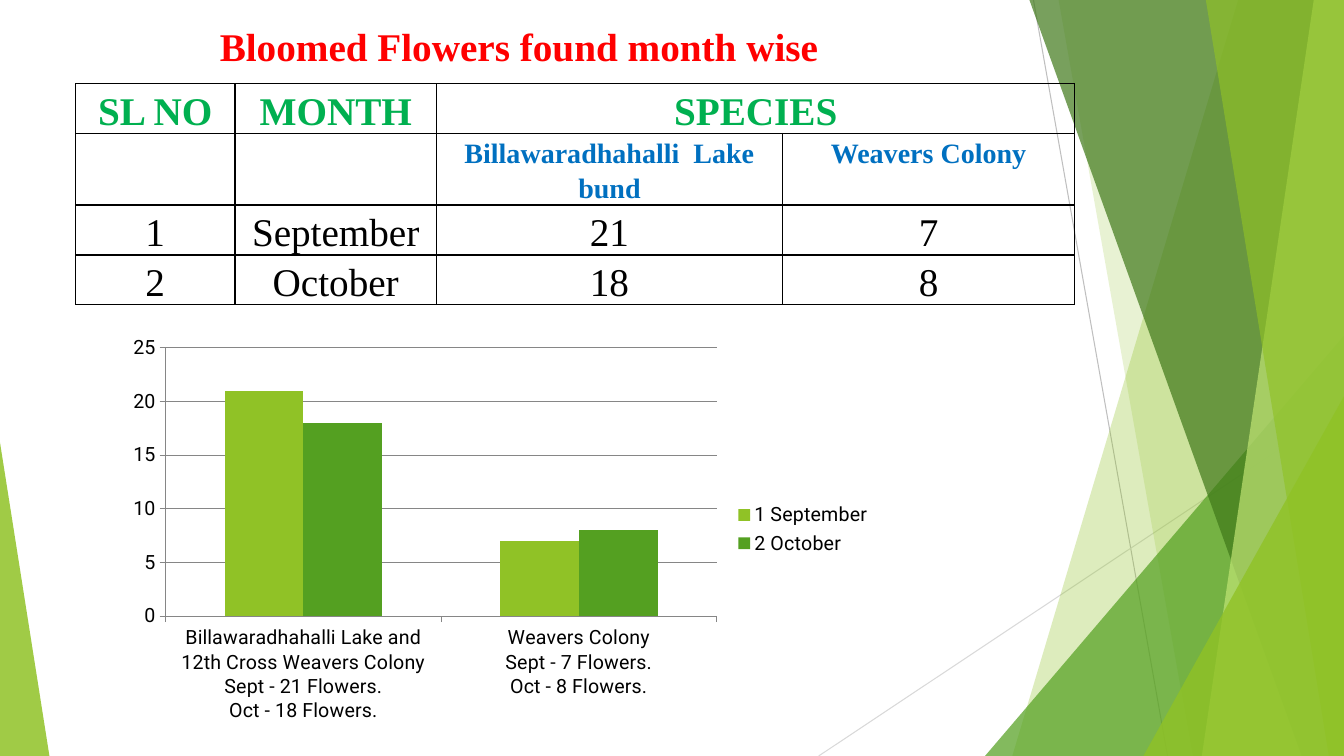
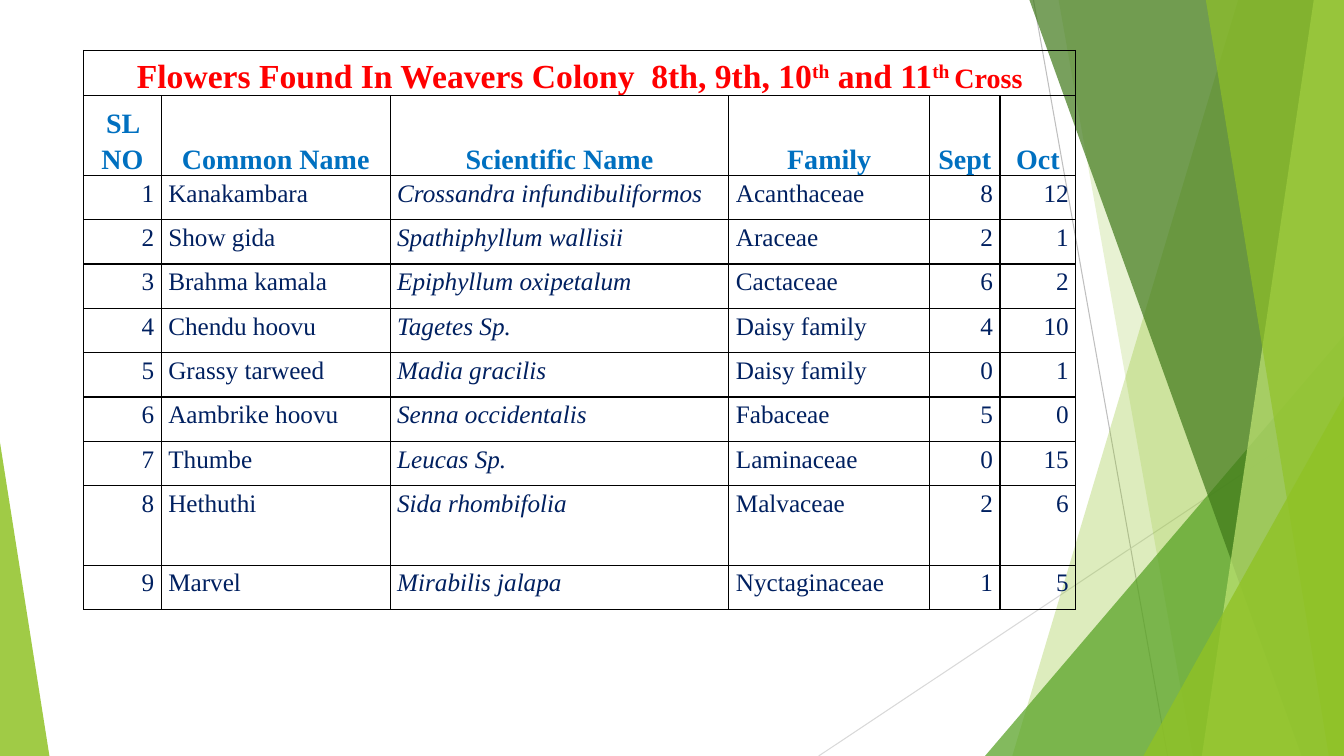
"""Build two slides about the flowers found in bloom, month by month."""
from lxml import etree
from pptx import Presentation
from pptx.chart.data import CategoryChartData
from pptx.dml.color import RGBColor
from pptx.enum import chart as ch, shapes, text
from pptx.oxml import ns
from pptx.util import Inches, Pt

WIDTH, HEIGHT = 13.33, 7.5
SERIF, SANS = "Times New Roman", "Roboto"
RED, BLUE, NAVY, BLACK = "FF0000", "0070C0", "002060", "000000"
EMERALD, LIME, GREEN, FOREST, PALE = "00B050", "90C226", "54A021", "3F7819", "C0E474"
GREY = "868686"
LEFT, CENTER, RIGHT = text.PP_ALIGN.LEFT, text.PP_ALIGN.CENTER, text.PP_ALIGN.RIGHT
TOP, BOTTOM = text.MSO_ANCHOR.TOP, text.MSO_ANCHOR.BOTTOM
rgb = RGBColor.from_string


def add_grid(s, left, top, widths, heights):
    """Add a table with black cell borders and no fill."""
    frame = s.shapes.add_table(len(heights), len(widths), Inches(left), Inches(top),
                               Inches(sum(widths)), Inches(sum(heights)))
    table = frame.table
    table.first_row = table.horz_banding = False
    for column, width in zip(table.columns, widths):
        column.width = Inches(width)
    for row, height in zip(table.rows, heights):
        row.height = Inches(height)
    for cell in table.iter_cells():
        tc_pr = cell._tc.get_or_add_tcPr()
        for side in ("lnL", "lnR", "lnT", "lnB"):
            ln = etree.SubElement(tc_pr, ns.qn(f"a:{side}"), w=str(Pt(1)))
            solid = etree.SubElement(ln, ns.qn("a:solidFill"))
            etree.SubElement(solid, ns.qn("a:srgbClr"), val=BLACK)
        cell.fill.background()
        cell.margin_left = cell.margin_right = Inches(0.07)
        cell.margin_top = cell.margin_bottom = 0
    return table


def write_cell(cell, words, size, color, bold=False, align=CENTER, anchor=TOP):
    """Write one paragraph into a table cell and return it."""
    cell.vertical_anchor = anchor
    p = cell.text_frame.paragraphs[0]
    p.text = words
    p.alignment, p.line_spacing = align, 1.15
    p.font.name, p.font.size, p.font.bold = SERIF, Pt(size), bold
    p.font.color.rgb = rgb(color)
    return p


prs = Presentation()
prs.slide_width, prs.slide_height = Inches(WIDTH), Inches(HEIGHT)
s = prs.slides.add_slide(prs.slide_layouts[5])
title = s.shapes.title

decoration = []
for x1, y1, x2, y2, color in [(10.25, 0, 11.58, HEIGHT, "BFBFBF"),
                              (WIDTH, 4.03, 8.12, HEIGHT, "D9D9D9")]:
    line = s.shapes.add_connector(shapes.MSO_CONNECTOR.STRAIGHT, Inches(x1), Inches(y1),
                                  Inches(x2), Inches(y2))
    line.line.color.rgb = rgb(color)
    line.line.width = Pt(0.75)
    etree.SubElement(line.element.spPr, ns.qn("a:effectLst"))
    decoration.append(line)

# Bands hold (top x, bottom x); triangles hold (left, top, width, apex).
facets = [
    ((12.28, 10.04), LIME, 30),
    ((10.5, 11.83), LIME, 20),
    ((9.77, 3.33, 3.56, 1), GREEN, 72),
    ((10.21, 12.91), FOREST, 70),
    ((13.03, 11.92), PALE, 70),
    ((11.96, 13.18), LIME, 65),
    ((11.34, 3.93, 1.99, 1), LIME, 80),
    ((0, 4.39, 0.49, 0), LIME, 85),
]
for geometry, color, opacity in facets:
    if len(geometry) == 2:
        top_x, bottom_x = geometry
        outline = s.shapes.build_freeform(Inches(top_x), 0)
        outline.add_line_segments([(Inches(x), Inches(y)) for x, y in
                                   [(WIDTH, 0), (WIDTH, HEIGHT), (bottom_x, HEIGHT)]])
        sp = outline.convert_to_shape()
    else:
        left, top, width, apex = geometry
        sp = s.shapes.add_shape(shapes.MSO_SHAPE.ISOSCELES_TRIANGLE, Inches(left),
                                Inches(top), Inches(width), Inches(HEIGHT - top))
        sp.adjustments[0] = apex
    sp.shadow.inherit = False
    sp.line.fill.background()
    sp.fill.solid()
    sp.fill.fore_color.rgb = rgb(color)
    shade = sp.element.spPr.find(".//" + ns.qn("a:srgbClr"))
    etree.SubElement(shade, ns.qn("a:alpha"), val=str(opacity * 1000))
    decoration.append(sp)

for sp in decoration:
    prs.slide_master.shapes.element.append(sp.element)

title.left, title.top = Inches(2.08), Inches(0.17)
title.width, title.height = Inches(6.75), Inches(0.57)
tf = title.text_frame
tf.auto_size = text.MSO_AUTO_SIZE.NONE
tf.vertical_anchor = text.MSO_ANCHOR.MIDDLE
p = tf.paragraphs[0]
p.text = "Bloomed Flowers found month wise"
p.alignment = LEFT
p.font.name, p.font.size, p.font.bold = SERIF, Pt(28), True
p.font.color.rgb = rgb(RED)

months = [
    (("SL NO", "MONTH", "SPECIES", ""), 28, EMERALD, True),
    (("", "", "Billawaradhahalli  Lake bund", "Weavers Colony"), 20, BLUE, True),
    (("1", "September", "21", "7"), 28, BLACK, False),
    (("2", "October", "18", "8"), 28, BLACK, False),
]
table = add_grid(s, 0.75, 0.83, [1.58, 2, 3.43, 2.9], [0.49, 0.71, 0.49, 0.49])
table.cell(0, 2).merge(table.cell(0, 3))
for i, (words, size, color, bold) in enumerate(months):
    for j, word in enumerate(words):
        if word:
            write_cell(table.cell(i, j), word, size, color, bold)

data = CategoryChartData()
data.categories = [
    "Billawaradhahalli Lake and 12th Cross Weavers Colony\nSept - 21 Flowers.\nOct - 18 Flowers.",
    "Weavers Colony\nSept - 7 Flowers.\nOct - 8 Flowers.",
]
data.add_series("1 September", (21, 7))
data.add_series("2 October", (18, 8))
chart = s.shapes.add_chart(ch.XL_CHART_TYPE.COLUMN_CLUSTERED, Inches(1.17), Inches(3.25),
                           Inches(7.58), Inches(4), data).chart
chart.has_title = False
chart.font.name, chart.font.size = SANS, Pt(14)
chart.font.color.rgb = rgb(BLACK)
chart.has_legend = True
chart.legend.position = ch.XL_LEGEND_POSITION.RIGHT
chart.legend.include_in_layout = False
plot = chart.plots[0]
plot.gap_width, plot.overlap, plot.vary_by_categories = 150, 0, False
for series, color in zip(plot.series, (LIME, GREEN)):
    series.format.fill.solid()
    series.format.fill.fore_color.rgb = rgb(color)
values = chart.value_axis
values.minimum_scale, values.maximum_scale, values.major_unit = 0, 25, 5
for part in (values, chart.category_axis, values.major_gridlines):
    part.format.line.color.rgb = rgb(GREY)
    part.format.line.width = Pt(0.75)

s = prs.slides.add_slide(prs.slide_layouts[6])
flowers = [
    ("Kanakambara", "Crossandra infundibuliformos", "Acanthaceae", 8, 12),
    ("Show gida", "Spathiphyllum wallisii", "Araceae", 2, 1),
    ("Brahma kamala", "Epiphyllum oxipetalum", "Cactaceae", 6, 2),
    ("Chendu hoovu", "Tagetes Sp.", "Daisy family", 4, 10),
    ("Grassy tarweed", "Madia gracilis", "Daisy family", 0, 1),
    ("Aambrike hoovu", "Senna occidentalis", "Fabaceae", 5, 0),
    ("Thumbe", "Leucas Sp.", "Laminaceae", 0, 15),
    ("Hethuthi", "Sida rhombifolia", "Malvaceae", 2, 6),
    ("Marvel", "Mirabilis jalapa", "Nyctaginaceae", 1, 5),
]
table = add_grid(s, 0.83, 0.5, [0.77, 2.27, 3.36, 1.99, 0.7, 0.75],
                 [0.45, 0.79] + [0.44] * 7 + [0.79, 0.44])
table.cell(0, 0).merge(table.cell(0, 5))
p = write_cell(table.cell(0, 0), "", 24, RED, True, anchor=BOTTOM)
for words, size, raised in [("Flowers Found In Weavers Colony  8th, 9th, 10", 24, False),
                            ("th", 24, True), (" and 11", 24, False),
                            ("th ", 24, True), ("Cross", 20, False)]:
    r = p.add_run()
    r.text = words
    r.font.size = Pt(size)
    if raised:
        r.font._element.set("baseline", "30000")

headings = ("SL NO", "Common Name", "Scientific Name", "Family", "Sept", "Oct")
for j, heading in enumerate(headings):
    write_cell(table.cell(1, j), heading, 20, BLUE, True, anchor=BOTTOM)
for number, flower in enumerate(flowers, 1):
    for j, value in enumerate((number, *flower)):
        align = RIGHT if isinstance(value, int) else LEFT
        p = write_cell(table.cell(number + 1, j), str(value), 18, NAVY, align=align)
        p.font.italic = headings[j] == "Scientific Name"

prs.save("out.pptx")
